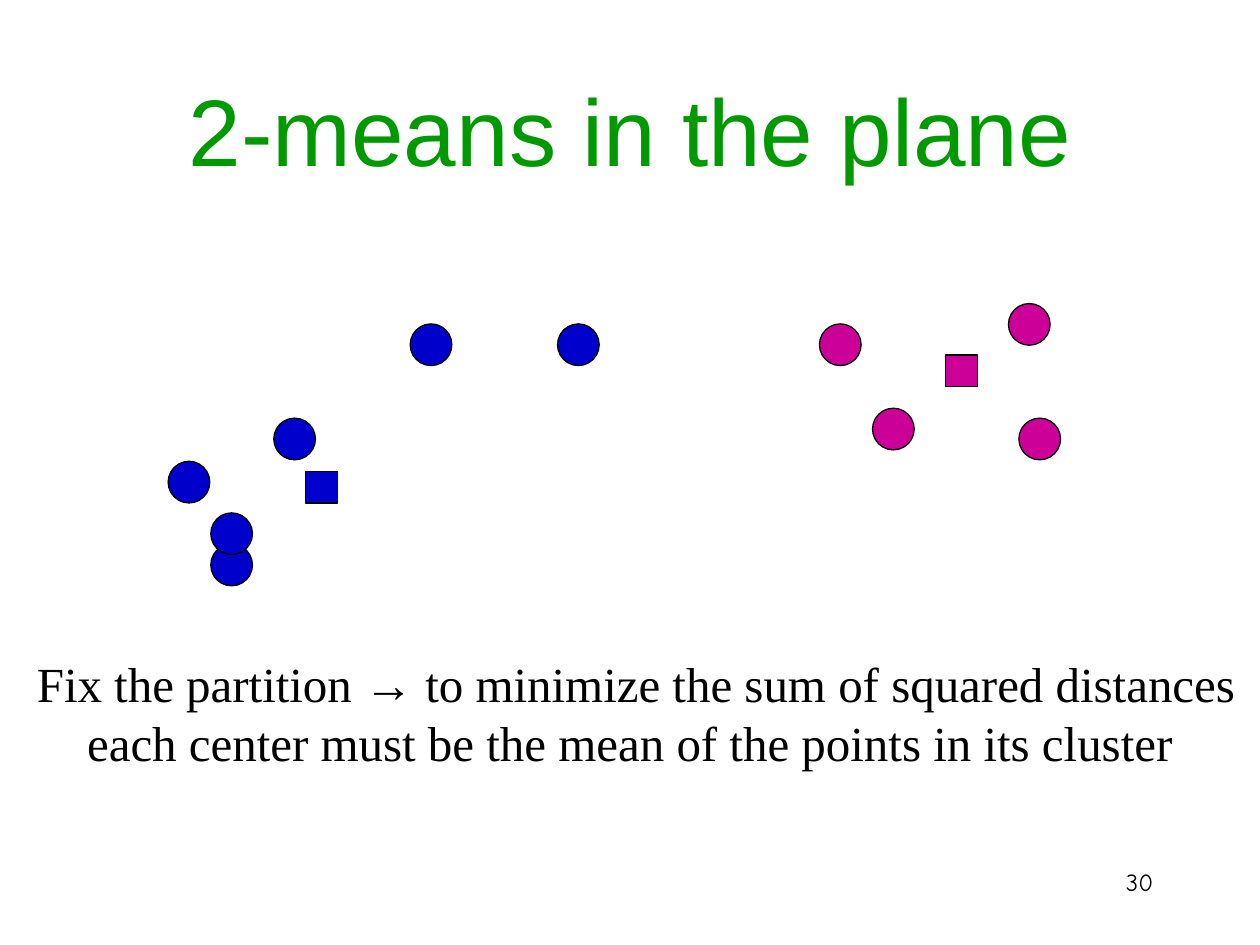
from dataclasses import dataclass

from pptx import Presentation
from pptx.dml.color import RGBColor
from pptx.enum.shapes import MSO_SHAPE as Preset
from pptx.enum.text import MSO_ANCHOR as Anchor, PP_ALIGN as Align
from pptx.util import Cm, Pt


@dataclass(frozen=True)
class Theme:
    """Colours, fonts, type sizes and line width of the slide."""
    background: str = "FFFFFF"
    title: str = "009900"
    ink: str = "000000"
    blue: str = "0000CC"
    magenta: str = "CC0099"
    title_font: str = "Arial"
    body_font: str = "Times New Roman"
    number_font: str = "Comic Neue"
    title_size: float = 54
    body_size: float = 28
    number_size: float = 14
    outline: float = 0.75


@dataclass(frozen=True)
class Box:
    """A rectangle in centimetres."""
    left: float
    top: float
    width: float
    height: float

    def lengths(self):
        """Return the rectangle as slide lengths."""
        return Cm(self.left), Cm(self.top), Cm(self.width), Cm(self.height)


@dataclass(frozen=True)
class Cluster:
    """Points and centre of one cluster, as offsets in centimetres."""
    color: str
    points: tuple
    center: tuple


THEME = Theme()
POINT_SIZE = 0.84
CENTER_SIZE = 0.64
CLUSTERS = (
    Cluster(
        THEME.blue,
        ((0.86, 4.85), (0, 3.18), (2.13, 2.31), (7.85, 0.41), (4.88, 0.41), (0.86, 4.22)),
        (2.77, 3.38),
    ),
    Cluster(
        THEME.magenta,
        ((16.94, 0), (17.15, 2.31), (13.13, 0.41), (14.2, 2.11)),
        (15.67, 1.04),
    ),
)


def write_text(shape, text, *, font, size, color=THEME.ink, align=Align.CENTER, anchor=Anchor.TOP):
    """Fill a shape with one formatted paragraph."""
    frame = shape.text_frame
    frame.word_wrap = True
    frame.vertical_anchor = anchor
    paragraph = frame.paragraphs[0]
    paragraph.alignment = align
    run = paragraph.add_run()
    run.text = text
    run.font.name = font
    run.font.size = Pt(size)
    run.font.color.rgb = RGBColor.from_string(color)


def add_title(slide, box, text):
    """Place and format the title placeholder."""
    title = slide.shapes.title
    title.left, title.top, title.width, title.height = box.lengths()
    write_text(title, text, font=THEME.title_font, size=THEME.title_size,
               color=THEME.title, anchor=Anchor.MIDDLE)


def add_marker(slide, preset, box, color):
    """Draw one outlined marker."""
    marker = slide.shapes.add_shape(preset, *box.lengths())
    marker.shadow.inherit = False
    marker.fill.solid()
    marker.fill.fore_color.rgb = RGBColor.from_string(color)
    marker.line.color.rgb = RGBColor.from_string(THEME.ink)
    marker.line.width = Pt(THEME.outline)


def add_plane(slide, box, clusters):
    """Draw the points and the centre of every cluster in the box."""
    for cluster in clusters:
        markers = [(Preset.OVAL, POINT_SIZE, point) for point in cluster.points]
        markers.append((Preset.RECTANGLE, CENTER_SIZE, cluster.center))
        for preset, size, (x, y) in markers:
            place = Box(box.left + x, box.top + y, size, size)
            add_marker(slide, preset, place, cluster.color)


def add_text(slide, box, text, **text_format):
    """Add a text box with one formatted paragraph."""
    write_text(slide.shapes.add_textbox(*box.lengths()), text, **text_format)


def main():
    """Build and save the slide."""
    presentation = Presentation()
    presentation.slide_width, presentation.slide_height = Cm(25.4), Cm(19.05)
    slide = presentation.slides.add_slide(presentation.slide_layouts.get_by_name("Title Only"))
    slide.background.fill.solid()
    slide.background.fill.fore_color.rgb = RGBColor.from_string(THEME.background)

    add_title(slide, Box(1.9, 1, 21.6, 3.18), "2-means in the plane")
    add_text(slide, Box(18.2, 17.35, 5.3, 1.27), "30",
             font=THEME.number_font, size=THEME.number_size, align=Align.RIGHT)
    add_plane(slide, Box(3.39, 6.12, 18, 5.7), CLUSTERS)
    add_text(slide, Box(0, 13.05, 25.4, 2.65),
             " Fix the partition → to minimize the sum of squared distances "
             "each center must be the mean of the points in its cluster",
             font=THEME.body_font, size=THEME.body_size)
    presentation.save("out.pptx")


if __name__ == "__main__":
    main()
